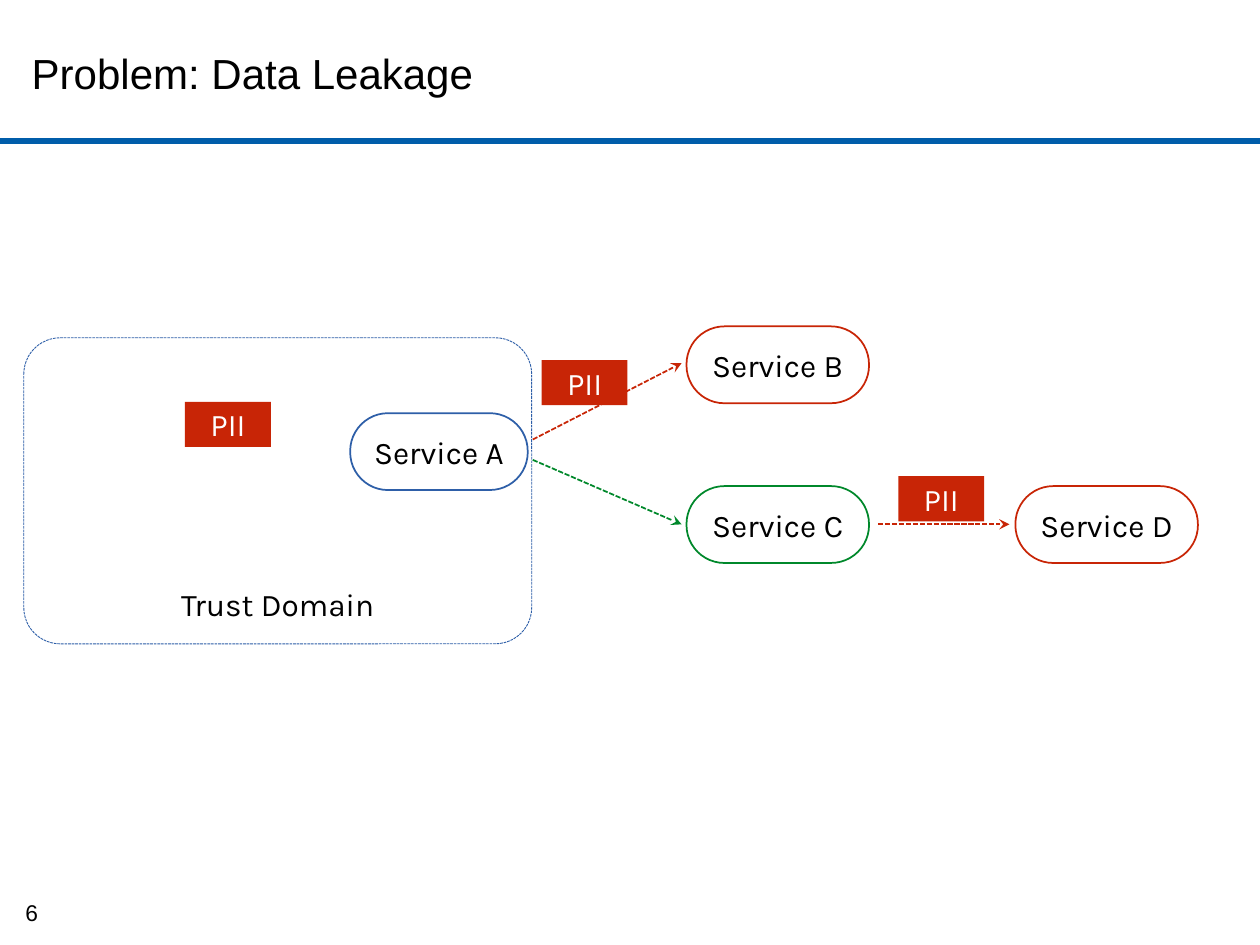
"""Build the slide that shows how personal data leaks out of a trust domain."""
from lxml.etree import SubElement
from pptx import Presentation
from pptx.dml.color import RGBColor
from pptx.enum.dml import MSO_LINE as Dash
from pptx.enum.shapes import MSO_CONNECTOR as Conn, MSO_SHAPE as Kind
from pptx.enum.text import MSO_ANCHOR as Anchor, PP_ALIGN as Align
from pptx.oxml.ns import qn
from pptx.util import Cm, Pt

BLACK, WHITE = "000000", "FFFFFF"
RED, GREEN, BLUE, RULE = "C82506", "00882B", "2E5FA8", "005DAA"
TITLE = "Problem: Data Leakage"
NUMBER = "6"
DOMAIN = ("Trust Domain", (0.48, 6.81, 10.24, 6.17))
SERVICES = [
    ("Service A", 7.06, 8.33, 3.58, BLUE),
    ("Service B", 13.84, 6.58, 3.68, RED),
    ("Service C", 13.84, 9.8, 3.68, GREEN),
    ("Service D", 20.47, 9.8, 3.68, RED),
]
TAGS = [(3.73, 8.1), (10.92, 7.26), (18.11, 9.6)]
FLOWS = [
    ((10.74, 9.27, 13.74, 10.57), GREEN),
    ((10.74, 8.86, 13.74, 7.32), RED),
    ((17.7, 10.57, 20.35, 10.57), RED),
]


def color(text):
    return RGBColor.from_string(text)


def write(frame, text, size, font="Karla", ink=BLACK, pad=(0, 0),
          anchor=Anchor.MIDDLE, align=Align.CENTER):
    frame.margin_left = frame.margin_right = Cm(pad[0])
    frame.margin_top = frame.margin_bottom = Cm(pad[1])
    frame.vertical_anchor = anchor
    para = frame.paragraphs[0]
    para.alignment = align
    run = para.add_run()
    run.text = text
    run.font.name, run.font.size = font, Pt(size)
    run.font.color.rgb = color(ink)


def stroke(line, ink, width=1, dash=None):
    line.color.rgb = color(ink)
    line.width = Pt(width)
    if dash:
        line.dash_style = dash


def box(slide, kind, place, fill, round_by=None):
    shape = slide.shapes.add_shape(kind, *map(Cm, place))
    shape.shadow.inherit = False
    shape.fill.solid()
    shape.fill.fore_color.rgb = color(fill)
    shape.line.fill.background()
    shape.text_frame.word_wrap = True
    if round_by:
        shape.adjustments[0] = round_by
    return shape


def link(slide, ends, ink, width=1, dash=None, arrow=False):
    line = slide.shapes.add_connector(Conn.STRAIGHT, *map(Cm, ends))
    stroke(line.line, ink, width, dash)
    if arrow:
        SubElement(line.line._get_or_add_ln(), qn("a:tailEnd"), type="stealth")
    SubElement(line._element.spPr, qn("a:effectLst"))


def main():
    deck = Presentation()
    deck.slide_width, deck.slide_height = Cm(25.4), Cm(19.05)
    slide = deck.slides.add_slide(deck.slide_layouts[5])

    title = slide.shapes.title
    title.left, title.top, title.width, title.height = map(Cm, (0.64, 0.3, 18.62, 2.34))
    write(title.text_frame, TITLE, 24, "Arial", align=Align.LEFT)
    link(slide, (0, 2.84, 25.4, 2.84), RULE, 3.75)

    label, place = DOMAIN
    area = box(slide, Kind.ROUNDED_RECTANGLE, place, WHITE, 0.119)
    stroke(area.line, BLUE, 0.5, Dash.SQUARE_DOT)
    write(area.text_frame, label, 18, pad=(0.2, 0.2), anchor=Anchor.BOTTOM)

    for ends, ink in FLOWS:
        link(slide, ends, ink, dash=Dash.SQUARE_DOT, arrow=True)
    for label, left, top, width, ink in SERVICES:
        node = box(slide, Kind.ROUNDED_RECTANGLE, (left, top, width, 1.55), WHITE, 0.493)
        stroke(node.line, ink)
        write(node.text_frame, label, 18, pad=(0.05, 0.05))
    for left, top in TAGS:
        tag = box(slide, Kind.RECTANGLE, (left, top, 1.73, 0.91), RED)
        write(tag.text_frame, "PII", 18, ink=WHITE, pad=(0.1, 0.1))

    page = slide.shapes.add_textbox(*map(Cm, (0.08, 17.98, 1.12, 0.84)))
    page.text_frame.word_wrap = False
    write(page.text_frame, NUMBER, 13, "Arial", pad=(0.28, 0.13), anchor=Anchor.TOP)
    deck.save("out.pptx")


if __name__ == "__main__":
    main()
